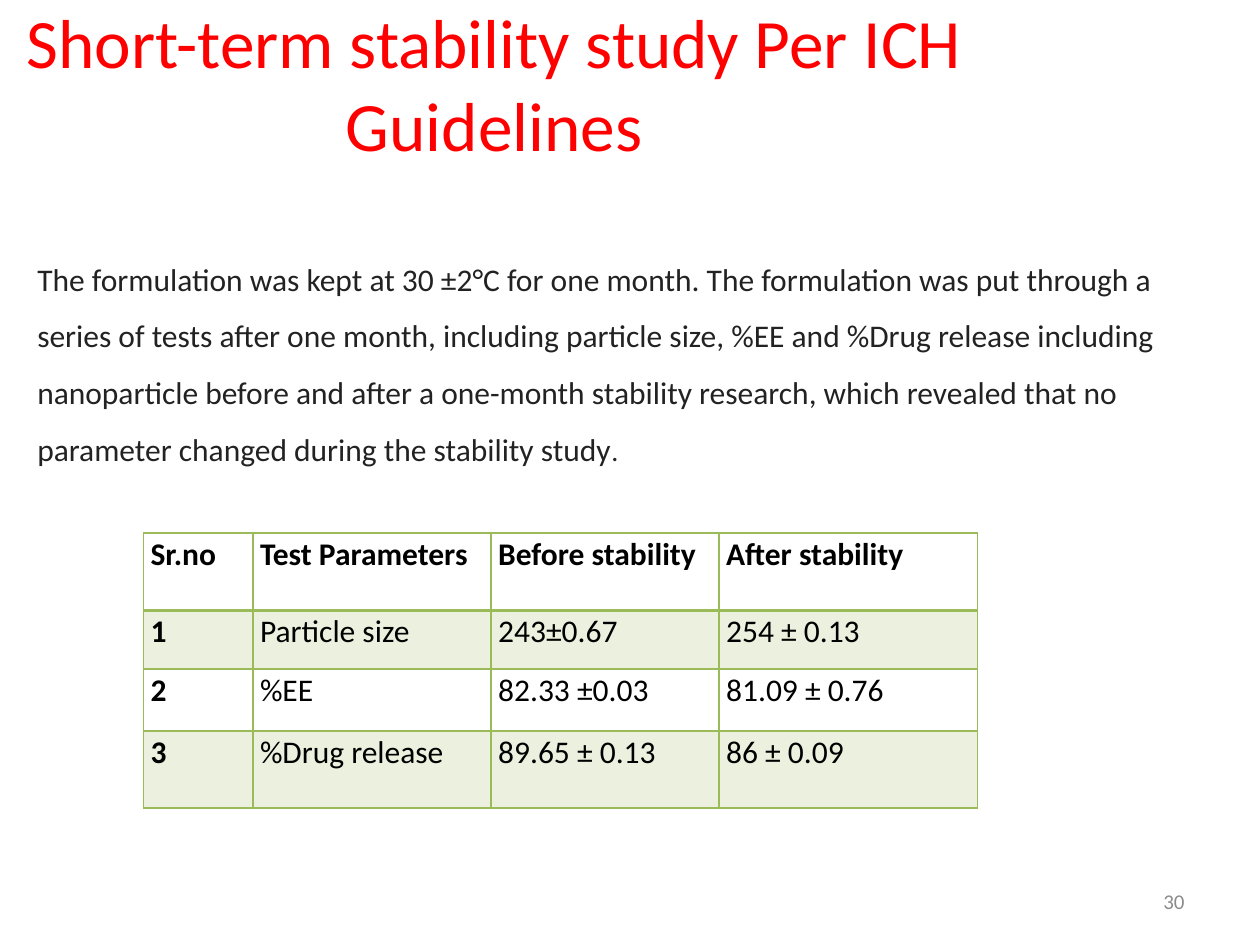
import pptx
import pptx.dml.color
import pptx.enum.text
import pptx.oxml
import pptx.oxml.ns
import pptx.util

Pt = pptx.util.Pt
ALIGN = pptx.enum.text.PP_ALIGN
ANCHOR = pptx.enum.text.MSO_ANCHOR
AUTO = pptx.enum.text.MSO_AUTO_SIZE
GREEN = "9BBB59"


def add_run(p, text, size, color, bold=False):
    r = p.add_run()
    r.text = text
    r.font.name = "Calibri"
    r.font.size = Pt(size)
    r.font.bold = bold
    r.font.color.rgb = pptx.dml.color.RGBColor.from_string(color)


def add_border(cell, side, width):
    """Draw one cell edge; side is L, R, T or B. Call before setting the fill."""
    cell._tc.get_or_add_tcPr().append(pptx.oxml.parse_xml(
        f'<a:ln{side} {pptx.oxml.ns.nsdecls("a")} w="{Pt(width)}">'
        f'<a:solidFill><a:srgbClr val="{GREEN}"/></a:solidFill></a:ln{side}>'))


prs = pptx.Presentation()
prs.slide_width, prs.slide_height = Pt(720), Pt(540)
s = prs.slides.add_slide(prs.slide_layouts[5])

# Title
sp = s.shapes.title
sp.left, sp.top, sp.width, sp.height = Pt(-2), Pt(45.4), Pt(569), Pt(49)
tf = sp.text_frame
tf.word_wrap = True
tf.auto_size = AUTO.NONE
tf.vertical_anchor = ANCHOR.BOTTOM
tf.margin_bottom = 0
p = tf.paragraphs[0]
p.alignment = ALIGN.CENTER
add_run(p, "Short-term stability study Per ICH Guidelines", 39.6, "FF0000")

# Stability results
rows = [
    ["Sr.no", "Test Parameters", "Before stability", "After stability"],
    ["1", "Particle size", "243±0.67", "254 ± 0.13"],
    ["2", "%EE", "82.33 ±0.03", "81.09 ± 0.76"],
    ["3", "%Drug release", "89.65 ± 0.13", "86 ± 0.09"],
]
col_widths = [62.6, 136.1, 130.3, 147.6]
row_heights = [44, 33.8, 35.3, 44]
table = s.shapes.add_table(len(rows), len(col_widths), Pt(82), Pt(304.6),
                           Pt(sum(col_widths)), Pt(sum(row_heights))).table
table.first_row = False
table.horz_banding = False
for column, width in zip(table.columns, col_widths):
    column.width = Pt(width)
for i, (row, height) in enumerate(zip(rows, row_heights)):
    table.rows[i].height = Pt(height)
    for j, text in enumerate(row):
        cell = table.cell(i, j)
        cell.margin_left = cell.margin_right = Pt(4)
        cell.margin_top = cell.margin_bottom = 0
        p = cell.text_frame.paragraphs[0]
        p.alignment = ALIGN.JUSTIFY
        p.line_spacing = 1.07
        add_run(p, text, 18, "000000", bold=i == 0 or j == 0)
        add_border(cell, "L", 1)
        add_border(cell, "R", 1)
        add_border(cell, "T", 2 if i == 1 else 1)
        add_border(cell, "B", 2 if i == 0 else 1)
        if i % 2:
            cell.fill.solid()
            cell.fill.fore_color.rgb = pptx.dml.color.RGBColor.from_string("EBF1DE")
        else:
            cell.fill.background()

# Description
tf = s.shapes.add_textbox(Pt(14.2), Pt(134), Pt(686), Pt(134.6)).text_frame
tf.word_wrap = True
tf.auto_size = AUTO.SHAPE_TO_FIT_TEXT
p = tf.paragraphs[0]
p.line_spacing = 1.5
add_run(p, "The formulation was kept at 30 ±2°C for one month. The formulation was put "
           "through a series of tests after one month, including particle size, %EE and "
           "%Drug release including nanoparticle before and after a one-month stability "
           "research, which revealed that no parameter changed during the stability study",
        18, "222222")
add_run(p, ".", 16, "222222")

# Page number
tf = s.shapes.add_textbox(Pt(516), Pt(500.5), Pt(168), Pt(28.8)).text_frame
tf.word_wrap = True
tf.vertical_anchor = ANCHOR.MIDDLE
p = tf.paragraphs[0]
p.alignment = ALIGN.RIGHT
add_run(p, "30", 12, "8C8C8C")

prs.save("out.pptx")
